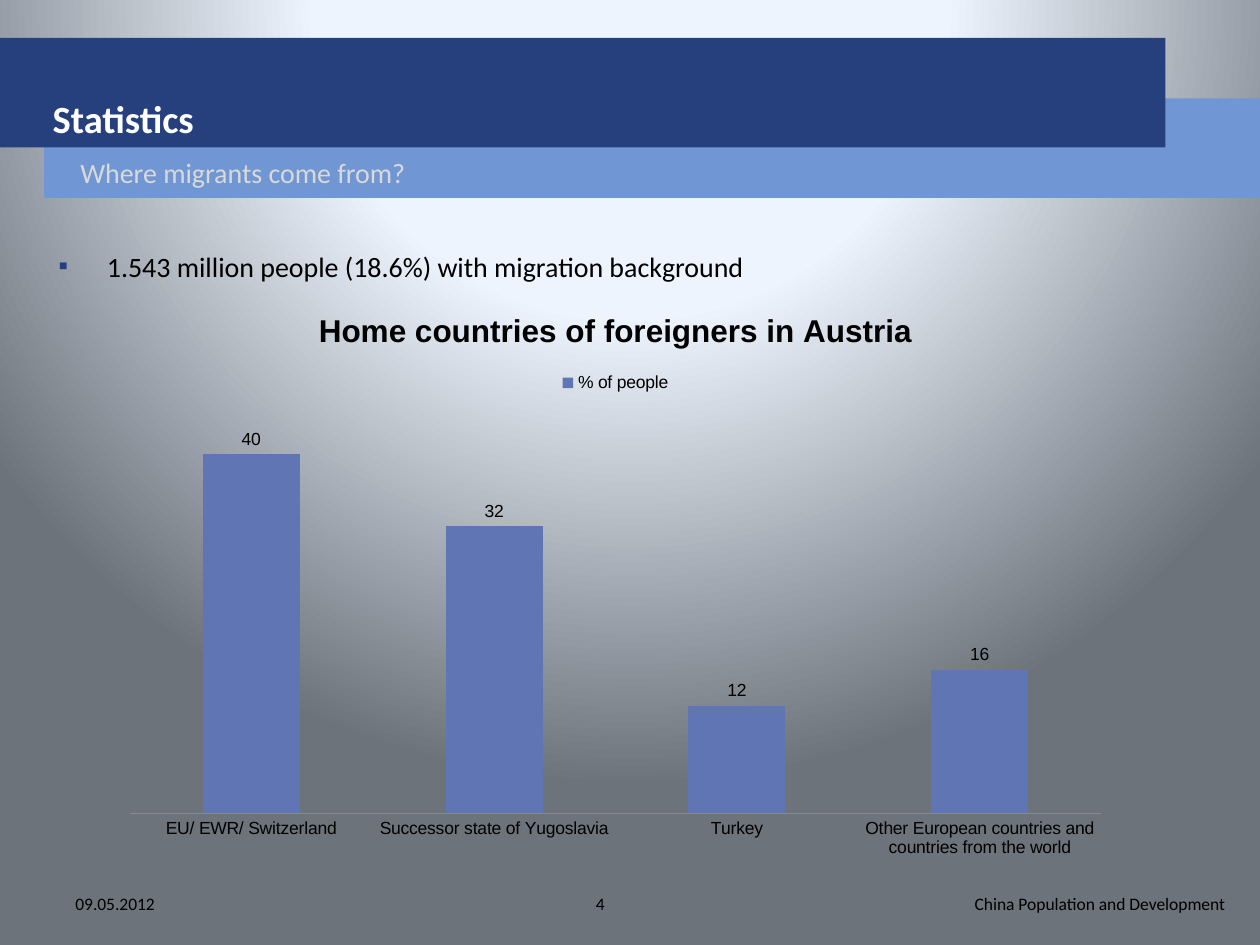
from pptx import Presentation
from pptx.chart.data import CategoryChartData
from pptx.dml.color import RGBColor
from pptx.enum.chart import (XL_CHART_TYPE as ChartType, XL_LABEL_POSITION as LabelPosition,
                             XL_LEGEND_POSITION as LegendPosition, XL_TICK_MARK as TickMark)
from pptx.enum.shapes import MSO_SHAPE as Shape
from pptx.enum.text import MSO_ANCHOR as Anchor, PP_ALIGN as Align
from pptx.oxml import parse_xml
from pptx.oxml.ns import nsdecls
from pptx.util import Inches, Pt

NAVY = RGBColor(0x26, 0x40, 0x7E)
LIGHT_BLUE = RGBColor(0x70, 0x97, 0xD3)
BAR_BLUE = RGBColor(0x60, 0x76, 0xB4)
AXIS_GRAY = RGBColor(0x86, 0x8B, 0x92)
PALE_GRAY = RGBColor(0xD9, 0xD9, 0xD9)
WHITE = RGBColor(0xFF, 0xFF, 0xFF)
BLACK = RGBColor(0, 0, 0)
BACKGROUND_STOPS = [(0, "F0F6FE"), (40, "EDF4FD"), (100, "6D737B")]


class SlideBuilder:
    text_font = "Calibri"
    chart_font = "Arial"

    def __init__(self, slide):
        self.slide = slide

    def background(self, stops):
        """Fill the slide with a circular gradient centred above its top edge."""
        stops_xml = "".join(
            f'<a:gs pos="{position * 1000}"><a:srgbClr val="{color}"/></a:gs>'
            for position, color in stops)
        self.slide.element.cSld.insert(0, parse_xml(
            f'<p:bg {nsdecls("p", "a")}><p:bgPr><a:gradFill rotWithShape="1">'
            f'<a:gsLst>{stops_xml}</a:gsLst><a:path path="circle">'
            '<a:fillToRect l="50000" t="-80000" r="50000" b="180000"/></a:path>'
            '</a:gradFill><a:effectLst/></p:bgPr></p:bg>'))

    def band(self, left, top, width, height, color):
        shape = self.slide.shapes.add_shape(
            Shape.RECTANGLE, Inches(left), Inches(top), Inches(width), Inches(height))
        shape.shadow.inherit = False
        shape.fill.solid()
        shape.fill.fore_color.rgb = color
        shape.line.fill.background()

    def text(self, text, left, top, width, height, size=10, color=BLACK, bold=False,
             align=Align.LEFT, anchor=Anchor.MIDDLE, margin=0, indent=0, space_before=0):
        """Add a one-paragraph text box and return the paragraph."""
        box = self.slide.shapes.add_textbox(
            Inches(left), Inches(top), Inches(width), Inches(height))
        frame = box.text_frame
        frame.word_wrap = True
        frame.vertical_anchor = anchor
        frame.text = text
        paragraph = frame.paragraphs[0]
        paragraph.alignment = align
        paragraph.space_before = Pt(space_before)
        properties = paragraph._p.get_or_add_pPr()
        properties.set("marL", str(Inches(margin)))
        properties.set("indent", str(Inches(indent)))
        self.style(paragraph.runs[0].font, self.text_font, size, color, bold)
        return paragraph

    def bullet(self, paragraph, color):
        properties = paragraph._p.get_or_add_pPr()
        for xml in (f'<a:buClr {nsdecls("a")}><a:srgbClr val="{color}"/></a:buClr>',
                    f'<a:buSzPct {nsdecls("a")} val="50000"/>',
                    f'<a:buFont {nsdecls("a")} typeface="Arial"/>',
                    f'<a:buChar {nsdecls("a")} char="■"/>'):
            properties.append(parse_xml(xml))

    def column_chart(self, title, series_name, values, left, top, width, height):
        data = CategoryChartData()
        data.categories = list(values)
        data.add_series(series_name, list(values.values()))
        chart = self.slide.shapes.add_chart(
            ChartType.COLUMN_CLUSTERED, Inches(left), Inches(top),
            Inches(width), Inches(height), data).chart
        self.style(chart.font, self.chart_font, 10, BLACK)

        chart.has_title = True
        chart.chart_title.include_in_layout = False
        chart.chart_title.text_frame.text = title
        title_run = chart.chart_title.text_frame.paragraphs[0].runs[0]
        self.style(title_run.font, self.chart_font, 18, BLACK, bold=True)

        chart.has_legend = True
        chart.legend.position = LegendPosition.TOP
        chart.legend.include_in_layout = False

        chart.value_axis.visible = False
        chart.value_axis.has_major_gridlines = False
        chart.value_axis.minimum_scale = 0
        chart.value_axis.maximum_scale = 45
        chart.category_axis.major_tick_mark = TickMark.NONE
        chart.category_axis.format.line.color.rgb = AXIS_GRAY

        plot = chart.plots[0]
        plot.gap_width = 150
        plot.overlap = -25
        plot.vary_by_categories = False
        plot.has_data_labels = True
        plot.data_labels.show_value = True
        plot.data_labels.position = LabelPosition.OUTSIDE_END
        fill = plot.series[0].format.fill
        fill.solid()
        fill.fore_color.rgb = BAR_BLUE

    @staticmethod
    def style(font, name, size, color, bold=False):
        font.name = name
        font.size = Pt(size)
        font.bold = bold
        font.color.rgb = color


def main():
    presentation = Presentation()
    presentation.slide_width = Inches(10)
    presentation.slide_height = Inches(7.5)
    builder = SlideBuilder(presentation.slides.add_slide(presentation.slide_layouts[6]))

    builder.background(BACKGROUND_STOPS)
    builder.band(0.35, 0.78, 9.65, 0.79, LIGHT_BLUE)
    builder.band(0, 0.3, 9.25, 0.87, NAVY)

    footers = [(7.49, "China Population and Development", Align.RIGHT),
               (3.6, "4", Align.CENTER),
               (0.5, "09.05.2012", Align.LEFT)]
    for left, text, align in footers:
        builder.text(text, left, 6.97, 2.33, 0.4, align=align)

    builder.text("Statistics", 0.13, 0.3, 8.81, 0.87, size=22, color=WHITE, bold=True,
                 anchor=Anchor.BOTTOM, margin=0.19)
    builder.text("Where migrants come from?", 0.35, 1.17, 8.98, 0.39, size=16,
                 color=PALE_GRAY, margin=0.38, indent=-0.19, space_before=3)
    statement = builder.text("1.543 million people (18.6%) with migration background",
                             0.37, 1.93, 9.25, 4.8, size=16, anchor=Anchor.TOP,
                             margin=0.38, indent=-0.38, space_before=3)
    builder.bullet(statement, NAVY)

    builder.column_chart(
        "Home countries of foreigners in Austria", "% of people",
        {"EU/ EWR/ Switzerland": 40,
         "Successor state of Yugoslavia": 32,
         "Turkey": 12,
         "Other European countries and countries from the world": 16},
        0.87, 2.27, 8.03, 4.63)

    presentation.save("out.pptx")


if __name__ == "__main__":
    main()
